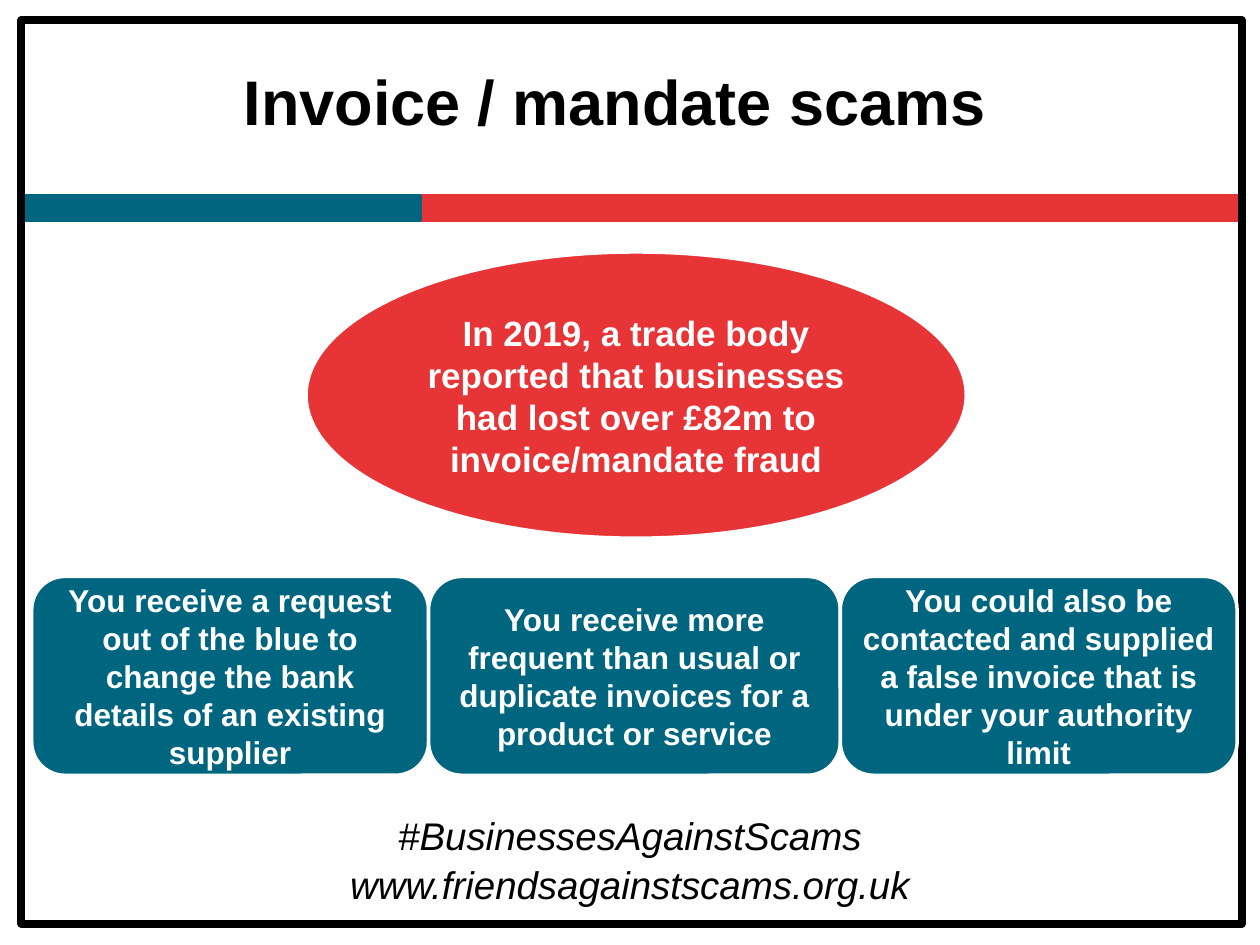
"""Build the invoice and mandate scams slide."""
from pptx import Presentation
from pptx.dml.color import RGBColor
from pptx.enum.shapes import MSO_SHAPE
from pptx.enum.text import MSO_ANCHOR, PP_ALIGN
from pptx.util import Cm, Pt

RECTANGLE, OVAL = MSO_SHAPE.RECTANGLE, MSO_SHAPE.OVAL
ROUNDED = MSO_SHAPE.ROUNDED_RECTANGLE
MIDDLE, CENTER = MSO_ANCHOR.MIDDLE, PP_ALIGN.CENTER
RED, TEAL, BLACK, WHITE = "E73437", "006680", "000000", "FFFFFF"
SLIDE_WIDTH, SLIDE_HEIGHT = 25.4, 19.05

TITLE = "Invoice / mandate scams"
HEADLINE = ("In 2019, a trade body reported that businesses had lost "
            "over £82m to invoice/mandate fraud")
CARDS = [
    (8, "You receive a request out of the blue to change the bank details "
        "of an existing supplier"),
    (8.3, "You receive more frequent than usual or duplicate invoices for "
          "a product or service"),
    (8, "You could also be contacted and supplied a false invoice that is "
        "under your authority limit"),
]
FOOTER = [
    (16.23, "#BusinessesAgainstScams"),
    (17.22, "www.friendsagainstscams.org.uk"),
]
BARS = [(1.07, 23.98, RED), (0.43, 8.05, TEAL)]
BAR_TOP, BAR_HEIGHT = 3.94, 0.51
CARD_LEFT, CARD_TOP, CARD_HEIGHT = 0.64, 11.62, 4.01


def color(value):
    return RGBColor.from_string(value)


def write(shape, text, size, ink, bold=False, italic=False):
    frame = shape.text_frame
    frame.word_wrap = True
    frame.vertical_anchor = MIDDLE
    para = frame.paragraphs[0]
    para.text = text
    para.alignment = CENTER
    font = para.font
    font.name, font.size = "Arial", Pt(size)
    font.bold, font.italic = bold, italic
    font.color.rgb = color(ink)


def add_panel(slide, kind, place, fill, line, width=2):
    panel = slide.shapes.add_shape(kind, *map(Cm, place))
    panel.shadow.inherit = False
    if fill:
        panel.fill.solid()
        panel.fill.fore_color.rgb = color(fill)
    else:
        panel.fill.background()
    panel.line.color.rgb = color(line)
    panel.line.width = Pt(width)
    return panel


def main():
    deck = Presentation()
    deck.slide_width, deck.slide_height = Cm(SLIDE_WIDTH), Cm(SLIDE_HEIGHT)
    slide = deck.slides.add_slide(deck.slide_layouts[5])

    title = slide.shapes.title
    title.left, title.top, title.width, title.height = map(
        Cm, (0.43, 0.43, 23.93, 3.18))
    write(title, TITLE, 36, BLACK, bold=True)

    for left, width, fill in BARS:
        add_panel(slide, RECTANGLE, (left, BAR_TOP, width, BAR_HEIGHT), fill, fill)
    add_panel(slide, RECTANGLE, (0.43, 0.41, 24.61, 18.21), None, BLACK, 4.5)

    for top, text in FOOTER:
        box = slide.shapes.add_textbox(Cm(0), Cm(top), Cm(SLIDE_WIDTH), Cm(1.19))
        write(box, text, 22, BLACK, italic=True)

    ellipse = add_panel(slide, OVAL, (6.17, 5.08, 13.31, 5.77), RED, WHITE)
    write(ellipse, HEADLINE, 20, WHITE, bold=True)

    left = CARD_LEFT
    for width, text in CARDS:
        card = add_panel(slide, ROUNDED, (left, CARD_TOP, width, CARD_HEIGHT), TEAL, WHITE)
        write(card, text, 18, WHITE, bold=True)
        left += width

    deck.save("out.pptx")


if __name__ == "__main__":
    main()
